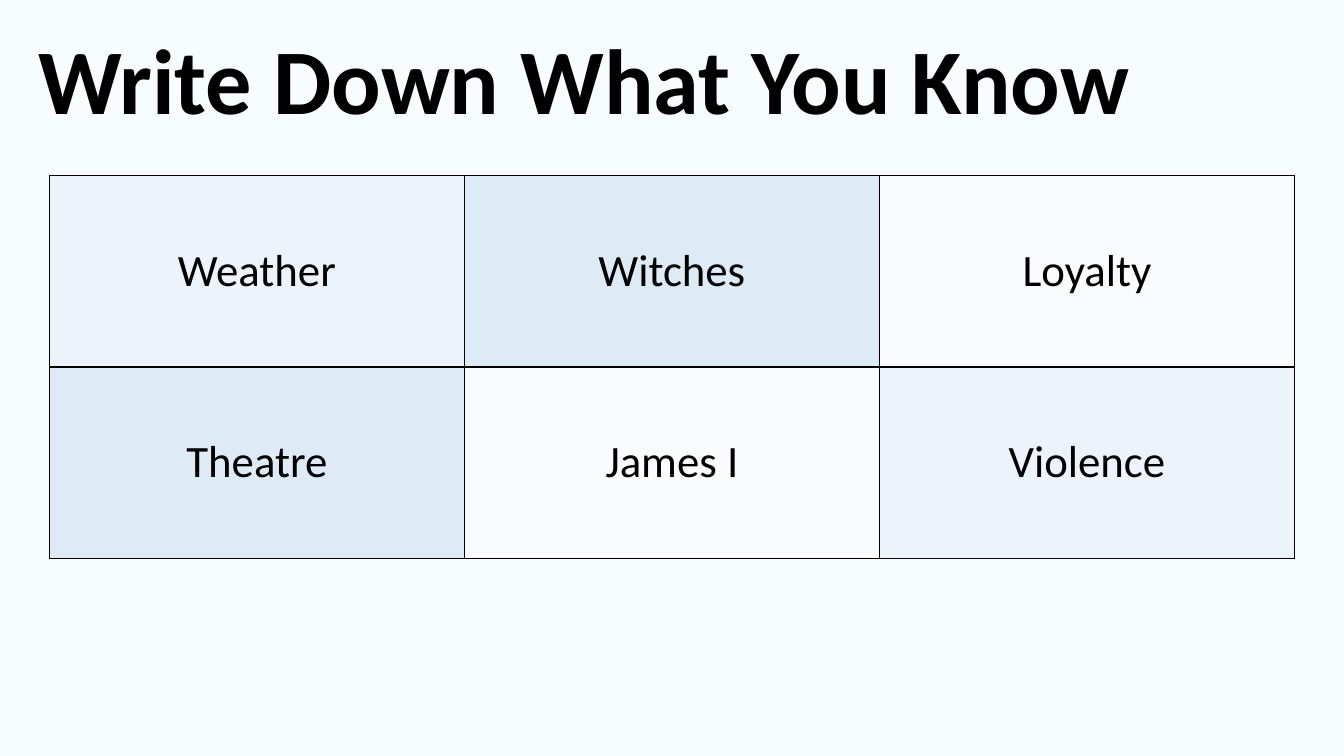
import pptx
import pptx.dml.color
import pptx.enum.text
import pptx.oxml
import pptx.oxml.ns
import pptx.util
from pptx.util import Inches

FONT = "Calibri"
BLACK = "000000"
PALE, BLUE, WHITE = "ECF3FA", "DEEBF7", "F9FBFD"
TOPICS = [
    [("Weather", PALE), ("Witches", BLUE), ("Loyalty", WHITE)],
    [("Theatre", BLUE), ("James I", WHITE), ("Violence", PALE)],
]


def rgb(value):
    return pptx.dml.color.RGBColor.from_string(value)


def set_fill(fill, color):
    fill.solid()
    fill.fore_color.rgb = rgb(color)


def write(tf, text, size, align, bold=False):
    p = tf.paragraphs[0]
    p.alignment = align
    r = p.add_run()
    r.text = text
    font_format = {"name": FONT, "size": pptx.util.Pt(size), "bold": bold}
    for name, value in font_format.items():
        setattr(r.font, name, value)
    r.font.color.rgb = rgb(BLACK)


def add_title(s, text):
    title = s.shapes.title
    box = {"left": 0.28, "top": 0.17, "width": 12.74, "height": 1.21}
    for name, value in box.items():
        setattr(title, name, Inches(value))
    tf = title.text_frame
    frame_format = {
        "word_wrap": True,
        "auto_size": pptx.enum.text.MSO_AUTO_SIZE.SHAPE_TO_FIT_TEXT,
        "vertical_anchor": pptx.enum.text.MSO_ANCHOR.TOP,
    }
    for name, value in frame_format.items():
        setattr(tf, name, value)
    write(tf, text, 66, pptx.enum.text.PP_ALIGN.LEFT, bold=True)


def set_borders(cell, color, width):
    tc_pr = cell._tc.get_or_add_tcPr()
    for side in ("lnL", "lnR", "lnT", "lnB"):
        tc_pr.append(pptx.oxml.parse_xml(
            f'<a:{side} {pptx.oxml.ns.nsdecls("a")} w="{pptx.util.Pt(width)}">'
            f'<a:solidFill><a:srgbClr val="{color}"/></a:solidFill></a:{side}>'))


def add_topic_table(s, topics):
    table = s.shapes.add_table(
        len(topics), len(topics[0]),
        Inches(0.49), Inches(1.74), Inches(12.35), Inches(3.8)).table
    for name in ("first_row", "horz_banding"):
        setattr(table, name, False)
    for i, row in enumerate(topics):
        for j, (text, color) in enumerate(row):
            cell = table.cell(i, j)
            cell.vertical_anchor = pptx.enum.text.MSO_ANCHOR.MIDDLE
            set_borders(cell, BLACK, 1)
            set_fill(cell.fill, color)
            write(cell.text_frame, text, 32, pptx.enum.text.PP_ALIGN.CENTER)


def main():
    prs = pptx.Presentation()
    prs.slide_width, prs.slide_height = Inches(13.33), Inches(7.5)
    s = prs.slides.add_slide(prs.slide_layouts.get_by_name("Title Only"))
    set_fill(s.background.fill, "F7FCFF")
    add_title(s, "Write Down What You Know")
    add_topic_table(s, TOPICS)
    prs.save("out.pptx")


if __name__ == "__main__":
    main()
